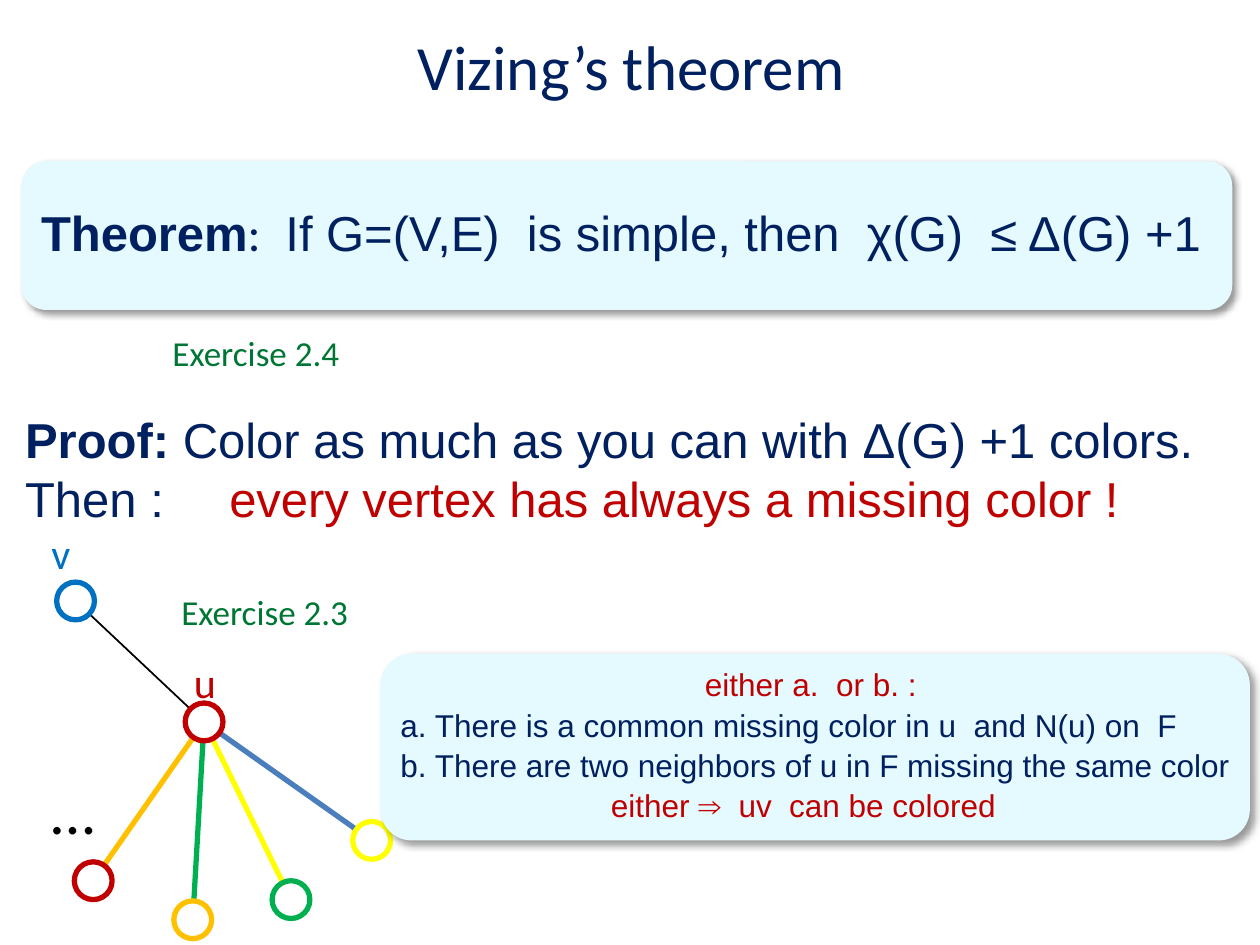
import pptx
import pptx.util
import pptx.dml.color
import pptx.enum.shapes
import pptx.enum.text
import pptx.oxml
import pptx.oxml.ns

RGB = pptx.dml.color.RGBColor
NAVY = RGB(0x00, 0x20, 0x60)
RED = RGB(0xC0, 0x00, 0x00)
BLUE = RGB(0x00, 0x70, 0xC0)
STEEL = RGB(0x4B, 0x7E, 0xBC)
GREEN = RGB(0x00, 0xB0, 0x50)
DARK_GREEN = RGB(0x00, 0x76, 0x35)
ORANGE = RGB(0xFF, 0xC0, 0x00)
YELLOW = RGB(0xFF, 0xFF, 0x00)
BLACK = RGB(0x00, 0x00, 0x00)
WHITE = RGB(0xFF, 0xFF, 0xFF)
PALE = RGB(0xE5, 0xFA, 0xFF)

PX = 9144  # 100 px to the inch
DIAMETER = 30
CENTER = pptx.enum.text.PP_ALIGN.CENTER
LEFT = pptx.enum.text.PP_ALIGN.LEFT
MIDDLE = pptx.enum.text.MSO_ANCHOR.MIDDLE
SHAPES = pptx.enum.shapes.MSO_SHAPE

# Paragraphs are lists of runs: (text, font, bold, colour)
TITLE = [[("Vizing’s theorem", "Calibri", False, NAVY)]]
THEOREM = [[
    ("Theorem", "Arial", True, NAVY),
    (": ", "Calibri", False, NAVY),
    (" If G=(V,E)  is simple, then  χ(G)  ≤ Δ(G) +1", "Arial", False, NAVY),
]]
PROOF = [
    [("Proof: ", "Arial", True, NAVY),
     ("Color as much as you can with Δ(G) +1 colors.", "Arial", False, NAVY)],
    [("Then :\t", "Arial", False, NAVY),
     ("every vertex has always a missing color !", "Arial", False, RED)],
]
CASES = [
    [("either a.  or b. : ", "Arial", False, RED)],
    [("a. There is a common missing color in u  and N(u) on  F", "Arial", False, NAVY)],
    [("b. There are two neighbors of u in F missing the same color", "Arial", False, NAVY)],
    [("either ⇒  uv  can be colored", "Arial", False, RED)],
]
# text, colour, size, box
LABELS = [
    ("u", RED, 24, (144, 516, 44, 50)),
    ("v", BLUE, 24, (31, 414, 41, 50)),
    ("…", BLACK, 36, (31, 607, 55, 71)),
    ("Exercise 2.3", DARK_GREEN, 20, (134, 464, 168, 44)),
    ("Exercise 2.4", DARK_GREEN, 20, (127, 258, 168, 44)),
]
U_CENTER = (162, 573)
# centre, ring colour, edge colour, edge width
NEIGHBORS = [
    ((60, 477), BLUE, BLACK, 1),
    ((231, 714), GREEN, YELLOW, 3),
    ((153, 730), ORANGE, GREEN, 3),
    ((74, 699), RED, ORANGE, 3),
    ((295, 667), YELLOW, STEEL, 3),
]


def emu(*lengths):
    return [length * PX for length in lengths]


def write(frame, paragraphs, size):
    for index, runs in enumerate(paragraphs):
        para = frame.paragraphs[0] if index == 0 else frame.add_paragraph()
        para.alignment = LEFT
        for text, font, bold, color in runs:
            span = para.add_run()
            span.text = text
            span.font.name = font
            span.font.size = pptx.util.Pt(size)
            span.font.bold = bold
            span.font.color.rgb = color


def add_text(page, paragraphs, size, box):
    frame = page.shapes.add_textbox(*emu(*box)).text_frame
    frame.word_wrap = True
    write(frame, paragraphs, size)
    return frame


def add_card(page, paragraphs, size, box):
    """Pale rounded box with a soft shadow and unwrapped text."""
    card = page.shapes.add_shape(SHAPES.ROUNDED_RECTANGLE, *emu(*box))
    card.fill.solid()
    card.fill.fore_color.rgb = PALE
    card.line.fill.background()
    card.shadow.inherit = False
    effects = card._element.spPr.find(pptx.oxml.ns.qn("a:effectLst"))
    effects.append(pptx.oxml.parse_xml(
        f'<a:outerShdw {pptx.oxml.ns.nsdecls("a")} blurRad="50800" dist="38100" '
        'dir="2700000" algn="tl" rotWithShape="0"><a:srgbClr val="000000">'
        '<a:alpha val="40000"/></a:srgbClr></a:outerShdw>'))
    frame = card.text_frame
    frame.word_wrap = False
    frame.vertical_anchor = MIDDLE
    write(frame, paragraphs, size)
    for para in frame.paragraphs:
        para.line_spacing = 0.9
        para.space_before = pptx.util.Pt(size * 0.2)
    return frame


def add_edge(page, start, end, color, width):
    edge = page.shapes.add_connector(
        pptx.enum.shapes.MSO_CONNECTOR.STRAIGHT, *emu(*start, *end))
    edge.line.color.rgb = color
    edge.line.width = pptx.util.Pt(width)
    pptx.oxml.ns.qn("a:effectLst")
    edge._element.spPr.append(pptx.oxml.parse_xml(
        f'<a:effectLst {pptx.oxml.ns.nsdecls("a")}/>'))


def add_vertex(page, center, color):
    x, y = (value - DIAMETER // 2 for value in center)
    vertex = page.shapes.add_shape(SHAPES.OVAL, *emu(x, y, DIAMETER, DIAMETER))
    vertex.fill.solid()
    vertex.fill.fore_color.rgb = WHITE
    vertex.line.color.rgb = color
    vertex.line.width = pptx.util.Pt(3)
    vertex.shadow.inherit = False


def main():
    deck = pptx.Presentation()
    deck.slide_width, deck.slide_height = emu(1000, 750)
    page = deck.slides.add_slide(deck.slide_layouts[6])

    title = add_text(page, TITLE, 36, (51, -11, 900, 125))
    title.vertical_anchor = MIDDLE
    title.paragraphs[0].alignment = CENTER

    add_card(page, THEOREM, 28, (17, 128, 961, 118))

    proof = add_text(page, PROOF, 28, (-12, 320, 1000, 151))
    proof.margin_left = 32 * PX
    properties = proof.paragraphs[1]._p.get_or_add_pPr()
    properties.append(pptx.oxml.parse_xml(
        f'<a:tabLst {pptx.oxml.ns.nsdecls("a")}><a:tab pos="{162 * PX}" algn="l"/></a:tabLst>'))

    for center, _, color, width in NEIGHBORS:
        add_edge(page, U_CENTER, center, color, width)
    for center, color, _, _ in NEIGHBORS:
        add_vertex(page, center, color)
    add_vertex(page, U_CENTER, RED)

    cases = add_card(page, CASES, 18, (302, 519, 690, 148))
    cases.paragraphs[0].alignment = CENTER
    cases.paragraphs[-1]._p.get_or_add_pPr().set("marL", str(167 * PX))

    for text, color, size, box in LABELS:
        add_text(page, [[(text, "Calibri", False, color)]], size, box)

    deck.save("out.pptx")


if __name__ == "__main__":
    main()
